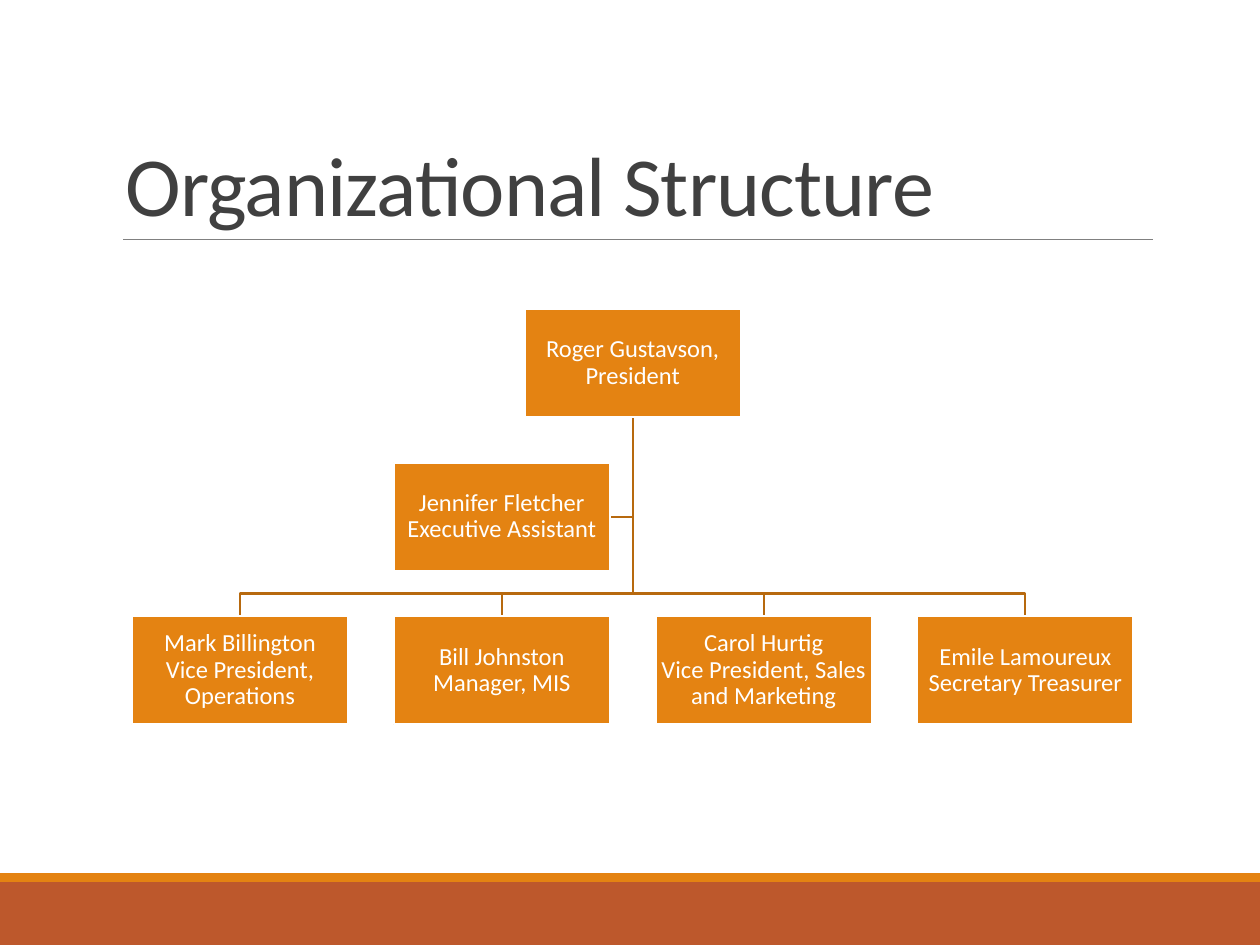
from lxml import etree
from pptx import Presentation
from pptx.dml.color import RGBColor
from pptx.enum.shapes import MSO_CONNECTOR, MSO_SHAPE
from pptx.enum.text import MSO_ANCHOR, PP_ALIGN
from pptx.oxml.ns import qn
from pptx.util import Pt

RECTANGLE = MSO_SHAPE.RECTANGLE
STRAIGHT = MSO_CONNECTOR.STRAIGHT
MIDDLE, BOTTOM = MSO_ANCHOR.MIDDLE, MSO_ANCHOR.BOTTOM
CENTER = PP_ALIGN.CENTER

TITLE = "Organizational Structure"
PRESIDENT = "Roger Gustavson, President"
ASSISTANT = "Jennifer Fletcher\nExecutive Assistant"
MANAGERS = [
    "Mark Billington\nVice President, Operations",
    "Bill Johnston\nManager, MIS",
    "Carol Hurtig\nVice President, Sales and Marketing",
    "Emile Lamoureux\nSecretary Treasurer",
]

COLORS = {
    "box": "E48312",
    "footer": "BD582C",
    "branch": "B7690E",
    "rule": "808080",
    "title": "404040",
    "white": "FFFFFF",
}
FONT = "Calibri"

SLIDE_WIDTH, SLIDE_HEIGHT = 720, 540
FOOTER_TOP, STRIPE_HEIGHT = 504, 5
BOX_WIDTH, BOX_HEIGHT = 123.6, 61.8
COLUMN_PITCH, ROW_PITCH = 149.6, 87.8
CHART_CENTER, CHART_TOP = 361.6, 176.6
BRANCH_GAP = 13  # from the horizontal branch down to the managers


def color(name):
    return RGBColor.from_string(COLORS[name])


def add_rectangle(slide, left, top, width, height, fill):
    shape = slide.shapes.add_shape(RECTANGLE, Pt(left), Pt(top), Pt(width), Pt(height))
    shape.shadow.inherit = False
    shape.fill.solid()
    shape.fill.fore_color.rgb = color(fill)
    shape.line.fill.background()
    return shape


def style_paragraph(paragraph, size, font_color, line_spacing):
    paragraph.line_spacing = line_spacing
    paragraph.font.name = FONT
    paragraph.font.size = Pt(size)
    paragraph.font.color.rgb = color(font_color)


def add_person(slide, text, center, top):
    box = add_rectangle(slide, center - BOX_WIDTH / 2, top, BOX_WIDTH, BOX_HEIGHT, "box")
    box.line.color.rgb = color("white")
    box.line.width = Pt(1.25)
    frame = box.text_frame
    frame.word_wrap = True
    frame.vertical_anchor = MIDDLE
    frame.margin_left = frame.margin_right = Pt(0.7)
    frame.margin_top = frame.margin_bottom = Pt(0.7)
    paragraph = frame.paragraphs[0]
    paragraph.text = text
    paragraph.alignment = CENTER
    style_paragraph(paragraph, 14, "white", 0.9)


def add_branch(slide, points):
    """Draw an open line with right-angled bends through the points."""
    start, *rest = [(Pt(x), Pt(y)) for x, y in points]
    builder = slide.shapes.build_freeform(*start)
    builder.add_line_segments(rest, close=False)
    branch = builder.convert_to_shape()
    branch.shadow.inherit = False
    branch.fill.background()
    branch.line.color.rgb = color("branch")
    branch.line.width = Pt(1.25)


def add_title(slide):
    rule = slide.shapes.add_connector(STRAIGHT, Pt(70.5), Pt(136.8), Pt(658.8), Pt(136.8))
    rule.line.color.rgb = color("rule")
    rule.line.width = Pt(0.5)
    etree.SubElement(rule.element.spPr, qn("a:effectLst"))

    title = slide.shapes.add_textbox(Pt(64.8), Pt(22.5), Pt(594), Pt(114.3))
    frame = title.text_frame
    frame.word_wrap = True
    frame.vertical_anchor = BOTTOM
    paragraph = frame.paragraphs[0]
    paragraph.text = TITLE
    style_paragraph(paragraph, 48, "title", 0.85)
    paragraph.runs[0].font.element.set("spc", "-50") if hasattr(
        paragraph.runs[0].font, "element"
    ) else paragraph.runs[0]._r.get_or_add_rPr().set("spc", "-50")


def add_organization_chart(slide):
    assistant_top = CHART_TOP + ROW_PITCH
    managers_top = assistant_top + ROW_PITCH
    branch_y = managers_top - BRANCH_GAP
    assistant_y = assistant_top + BOX_HEIGHT / 2
    trunk_start = (CHART_CENTER, CHART_TOP + BOX_HEIGHT)
    middle = (len(MANAGERS) - 1) / 2
    centers = [CHART_CENTER + (i - middle) * COLUMN_PITCH for i in range(len(MANAGERS))]
    assistant_center = centers[1]

    add_branch(slide, [
        trunk_start,
        (CHART_CENTER, assistant_y),
        (assistant_center + BOX_WIDTH / 2, assistant_y),
    ])
    for center in reversed(centers):
        add_branch(slide, [
            trunk_start,
            (CHART_CENTER, branch_y),
            (center, branch_y),
            (center, managers_top),
        ])

    add_person(slide, PRESIDENT, CHART_CENTER, CHART_TOP)
    for text, center in zip(MANAGERS, centers):
        add_person(slide, text, center, managers_top)
    add_person(slide, ASSISTANT, assistant_center, assistant_top)


def main():
    presentation = Presentation()
    presentation.slide_width = Pt(SLIDE_WIDTH)
    presentation.slide_height = Pt(SLIDE_HEIGHT)
    slide = presentation.slides.add_slide(presentation.slide_layouts[6])

    add_rectangle(slide, 0, FOOTER_TOP, SLIDE_WIDTH, SLIDE_HEIGHT - FOOTER_TOP, "footer")
    add_rectangle(slide, 0, FOOTER_TOP - STRIPE_HEIGHT, SLIDE_WIDTH, STRIPE_HEIGHT, "box")
    add_title(slide)
    add_organization_chart(slide)
    presentation.save("out.pptx")


if __name__ == "__main__":
    main()
